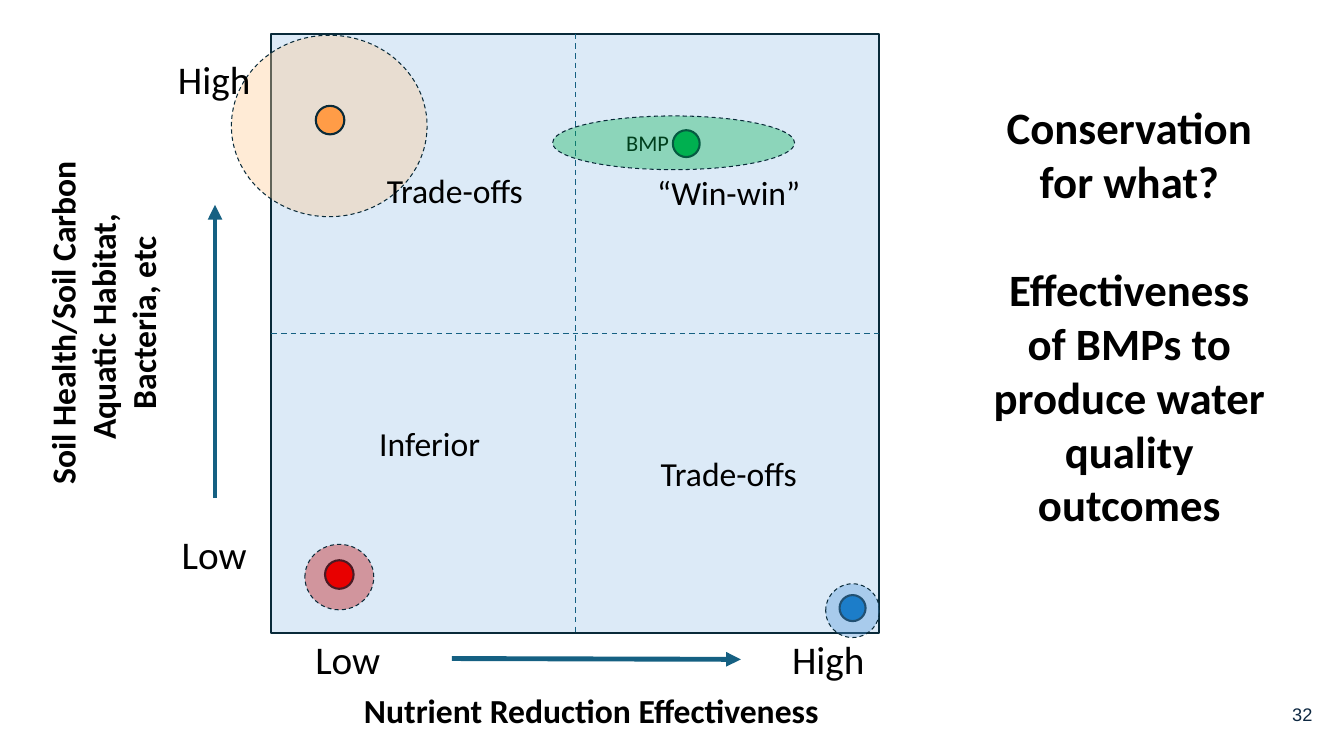
from dataclasses import dataclass

from lxml.etree import SubElement
from pptx import Presentation
from pptx.dml.color import RGBColor
from pptx.enum.dml import MSO_LINE
from pptx.enum.shapes import MSO_CONNECTOR, MSO_SHAPE
from pptx.enum.text import MSO_ANCHOR, PP_ALIGN
from pptx.oxml.ns import qn
from pptx.shapes.autoshape import Shape
from pptx.util import Inches, Pt

COLUMNS = 160  # the grid is 160 x 90 square cells
SLIDE_WIDTH, SLIDE_HEIGHT = Inches(13.333), Inches(7.5)
COLORS = {
    "matrix": "DCEAF7", "outline": "092A39", "axis": "156082",
    "text": "000000", "page": "0E2841",
    "orange": "FF9C47", "orange halo": "FFC88F",
    "green": "00B050", "green halo": "00B050",
    "blue": "0070C0", "blue halo": "4E95D9",
    "red": "FF0000", "red halo": "C00000",
}
HALO_OPACITY = 36


@dataclass(frozen=True)
class Box:
    left: float
    top: float
    width: float
    height: float

    @property
    def right(self) -> float:
        return self.left + self.width

    @property
    def bottom(self) -> float:
        return self.top + self.height

    @property
    def middle(self) -> tuple[float, float]:
        return self.left + self.width / 2, self.top + self.height / 2


@dataclass(frozen=True)
class Practice:
    """A practice as a dot inside its halo of uncertainty."""
    color: str
    dot: tuple[float, float]
    diameter: float
    halo: tuple[float, float]
    spread: tuple[float, float]
    halo_behind: bool = False


@dataclass(frozen=True)
class Label:
    text: str
    left: float
    top: float


MATRIX = Box(32.3, 4, 72.4, 71.4)
PRACTICES = [
    Practice("green", (81.7, 17.1), 3.2, (80.2, 17), (28.8, 6.4)),
    Practice("blue", (101.5, 72.4), 3.1, (101.5, 72.7), (6.4, 6.4)),
    Practice("orange", (39.3, 14.3), 3.4, (39.2, 15), (23.3, 21.6), halo_behind=True),
    Practice("red", (40.4, 68.4), 3.4, (40.4, 68.7), (8.2, 7.8)),
]
SCALE_ENDS = [
    Label("Low", 34.7, 75), Label("High", 91.9, 75),
    Label("Low", 18.8, 62.6), Label("High", 18.8, 6),
]
QUADRANTS = [
    Label("Trade-offs", 42.2, 19.6), Label("“Win-win”", 74.8, 19.9),
    Label("Inferior", 39.2, 49.7), Label("Trade-offs", 74.8, 53.3),
]

deck = Presentation()
deck.slide_width, deck.slide_height = SLIDE_WIDTH, SLIDE_HEIGHT
slide = deck.slides.add_slide(deck.slide_layouts[6])


def cells(count: float) -> int:
    return round(SLIDE_WIDTH * count / COLUMNS)


def place(box: Box) -> list[int]:
    return [cells(n) for n in (box.left, box.top, box.width, box.height)]


def add_figure(kind: MSO_SHAPE, box: Box, color: str, weight: float) -> Shape:
    figure = slide.shapes.add_shape(kind, *place(box))
    figure.shadow.inherit = False
    figure.fill.solid()
    figure.fill.fore_color.rgb = RGBColor.from_string(COLORS[color])
    figure.line.color.rgb = RGBColor.from_string(COLORS["outline"])
    figure.line.width = Pt(weight)
    return figure


def add_ellipse(center: tuple[float, float], size: tuple[float, float],
                color: str, weight: float) -> Shape:
    (x, y), (width, height) = center, size
    box = Box(x - width / 2, y - height / 2, width, height)
    return add_figure(MSO_SHAPE.OVAL, box, color, weight)


def add_halo(practice: Practice) -> None:
    halo = add_ellipse(practice.halo, practice.spread, f"{practice.color} halo", 0.75)
    halo.line.dash_style = MSO_LINE.DASH
    fill_color = halo.fill._xPr.find(qn("a:solidFill"))[0]
    SubElement(fill_color, qn("a:alpha"), val=str(HALO_OPACITY * 1000))


def add_line(start: tuple[float, float], end: tuple[float, float], weight: float,
             dashed: bool = False, arrow: bool = False) -> None:
    ends = [cells(n) for n in (*start, *end)]
    connector = slide.shapes.add_connector(MSO_CONNECTOR.STRAIGHT, *ends)
    connector.line.color.rgb = RGBColor.from_string(COLORS["axis"])
    connector.line.width = Pt(weight)
    if dashed:
        connector.line.dash_style = MSO_LINE.DASH
    if arrow:
        SubElement(connector.line._get_or_add_ln(), qn("a:tailEnd"), type="triangle")
    SubElement(connector._element.spPr, qn("a:effectLst"))


def add_text(text: str, box: Box, *, size: float = 24, bold: bool = False,
             font: str = "Calibri", color: str = "text", gap: float = 0,
             align: PP_ALIGN = PP_ALIGN.CENTER, anchor: MSO_ANCHOR = MSO_ANCHOR.TOP,
             margin: float = 0.1, rotation: float = 0) -> None:
    """Write one paragraph per line of text, with gap points between them."""
    holder = slide.shapes.add_textbox(*place(box))
    holder.rotation = rotation
    frame = holder.text_frame
    frame.word_wrap = True
    frame.vertical_anchor = anchor
    frame.margin_left = frame.margin_right = Inches(margin)
    frame.text = text
    for index, paragraph in enumerate(frame.paragraphs):
        paragraph.alignment = align
        if index and gap:
            paragraph.space_before = Pt(gap)
        for run in paragraph.runs:
            run.font.name, run.font.size, run.font.bold = font, Pt(size), bold
            run.font.color.rgb = RGBColor.from_string(COLORS[color])


def main() -> None:
    add_figure(MSO_SHAPE.RECTANGLE, MATRIX, "matrix", 1.5)
    for practice in PRACTICES:
        if practice.halo_behind:
            add_halo(practice)

    add_text("Nutrient Reduction Effectiveness", Box(26.6, 81.6, 87.6, 6), bold=True)
    add_text("Soil Health/Soil Carbon\nAquatic Habitat, \nBacteria, etc",
             Box(-20.2, 30.6, 64.9, 15.7), bold=True, rotation=270)
    for end in SCALE_ENDS:
        add_text(end.text, Box(end.left, end.top, 13.4, 6.8), size=28)
    add_line((53.8, 78.4), (88.2, 78.5), 3.5, arrow=True)
    add_line((25.6, 59.3), (25.6, 24.4), 3.5, arrow=True)

    for practice in PRACTICES:
        add_ellipse(practice.dot, (practice.diameter,) * 2, practice.color, 1.5)
    add_text("BMP", Box(72.7, 14.8, 8.8, 4.4), size=16)
    for quadrant in QUADRANTS:
        add_text(quadrant.text, Box(quadrant.left, quadrant.top, 23.9, 6))

    center_x, center_y = MATRIX.middle
    add_line((center_x, MATRIX.top), (center_x, MATRIX.bottom), 1, dashed=True)
    add_line((MATRIX.left, center_y), (MATRIX.right, center_y), 1, dashed=True)
    for practice in PRACTICES:
        if not practice.halo_behind:
            add_halo(practice)

    add_text("Conservation for what?\nEffectiveness of BMPs to produce water quality outcomes",
             Box(116.2, 11.3, 36.5, 52.9), size=32, bold=True, gap=39)
    add_text("32", Box(148.2, 81.6, 9.6, 6.8), size=13, font="Arial", color="page",
             align=PP_ALIGN.RIGHT, anchor=MSO_ANCHOR.MIDDLE, margin=0.13)
    deck.save("out.pptx")


if __name__ == "__main__":
    main()
